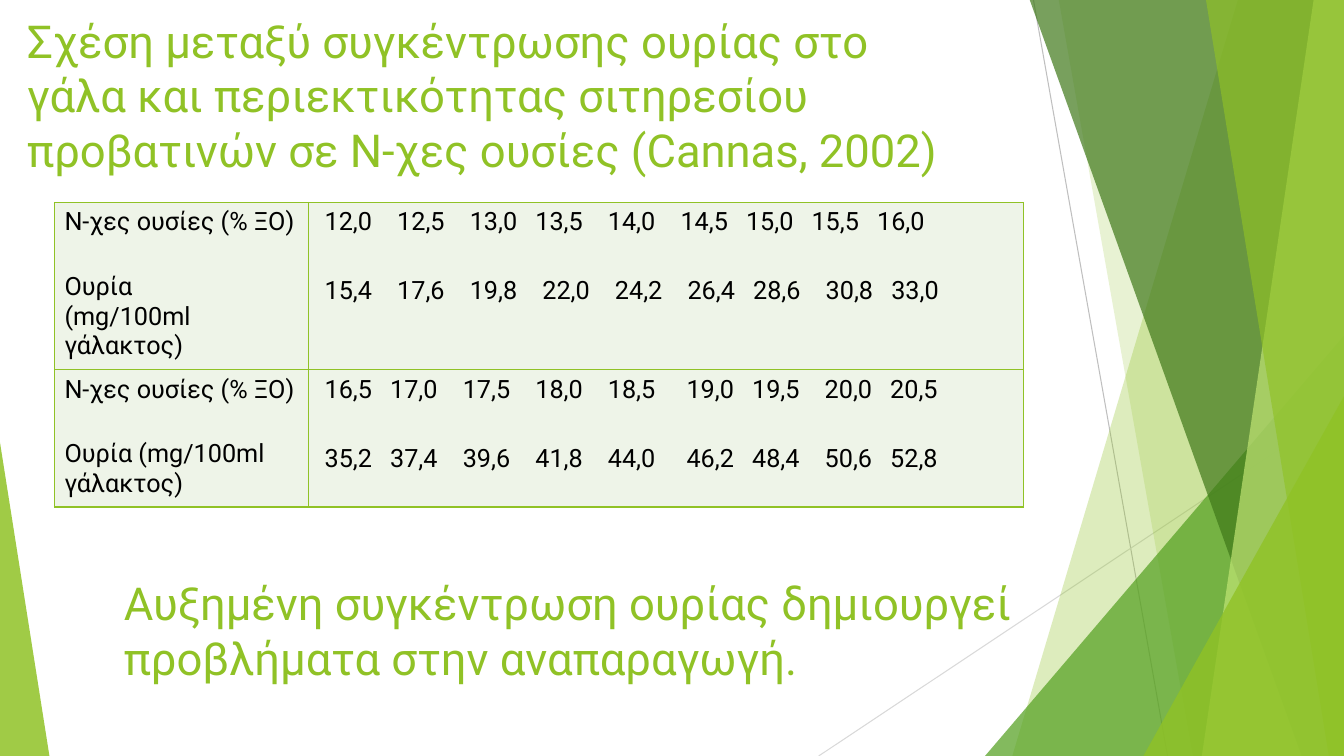
import itertools

import pptx
import pptx.dml.color
import pptx.enum.shapes
import pptx.enum.text
import pptx.oxml
import pptx.oxml.ns
import pptx.util
from pptx.util import Inches

GREEN = "90C226"
FONT = "Roboto"
NARROW, MEDIUM, WIDE = 0.65, 0.72, 0.78  # steps between values, inches

# Facets of the theme: corner points, colour, opacity in percent
FACETS_BELOW = [
    ([(12.28, -0.01), (13.33, -0.01), (13.33, 7.5), (10.04, 7.5)], GREEN, 30),
    ([(10.5, -0.01), (13.33, -0.01), (13.33, 7.5), (11.83, 7.5)], GREEN, 20),
]
FACETS_ABOVE = [
    ([(10.21, -0.01), (13.33, -0.01), (13.33, 7.5), (12.91, 7.5)], "3F7819", 70),
    ([(13.03, -0.01), (13.33, -0.01), (13.33, 7.5), (11.92, 7.5)], "C0E474", 70),
    ([(11.96, -0.01), (13.33, -0.01), (13.33, 7.5), (13.18, 7.5)], GREEN, 65),
]

# Each row: urea label lines, protein values and steps, urea values and steps
PROTEIN_LABEL = "N-χες ουσίες (% ΞΟ)"
LOWER_STEPS = [NARROW, MEDIUM, MEDIUM, MEDIUM, WIDE, NARROW, MEDIUM, NARROW]
MEASUREMENTS = [
    (["Ουρία", "(mg/100ml γάλακτος)"],
     "12,0 12,5 13,0 13,5 14,0 14,5 15,0 15,5 16,0",
     [MEDIUM] * 2 + [NARROW] + [MEDIUM] * 2 + [NARROW] * 3,
     "15,4 17,6 19,8 22,0 24,2 26,4 28,6 30,8 33,0",
     [MEDIUM] * 5 + [NARROW, MEDIUM, NARROW]),
    (["Ουρία (mg/100ml γάλακτος)"],
     "16,5 17,0 17,5 18,0 18,5 19,0 19,5 20,0 20,5", LOWER_STEPS,
     "35,2 37,4 39,6 41,8 44,0 46,2 48,4 50,6 52,8", LOWER_STEPS),
]


def rgb(color):
    return pptx.dml.color.RGBColor.from_string(color)


def add_xml(parent, xml):
    parent.append(pptx.oxml.parse_xml(
        xml.replace(">", f" {pptx.oxml.ns.nsdecls('a')}>", 1)))


def write(frame, text, first=False, size=18, color="000000", before=0, steps=()):
    """Write one paragraph, with tab stops at the running sums of steps."""
    paragraph = frame.paragraphs[0] if first else frame.add_paragraph()
    paragraph.alignment = pptx.enum.text.PP_ALIGN.LEFT
    paragraph.space_before = pptx.util.Pt(before)
    if steps:
        stops = "".join(f'<a:tab pos="{Inches(stop)}" algn="l"/>'
                        for stop in itertools.accumulate(steps))
        add_xml(paragraph._p.get_or_add_pPr(), f"<a:tabLst >{stops}</a:tabLst>")
    run = paragraph.add_run()
    run.text = text
    run.font.size = pptx.util.Pt(size)
    run.font.name = FONT
    run.font.color.rgb = rgb(color)


def add_statement(box, text):
    """Fill a box with one large green sentence."""
    frame = box.text_frame
    frame.word_wrap = True
    frame.auto_size = pptx.enum.text.MSO_AUTO_SIZE.NONE
    frame.vertical_anchor = pptx.enum.text.MSO_ANCHOR.TOP
    write(frame, text, first=True, size=32.4, color=GREEN)


def paint(shape, color, opacity):
    shape.shadow.inherit = False
    shape.line.fill.background()
    shape.fill.solid()
    shape.fill.fore_color.rgb = rgb(color)
    add_xml(shape.fill._xPr.find(".//" + pptx.oxml.ns.qn("a:srgbClr")),
            f'<a:alpha val="{opacity * 1000}"></a:alpha>')


def add_ray(slide, start, end, color):
    ray = slide.shapes.add_connector(
        pptx.enum.shapes.MSO_CONNECTOR.STRAIGHT,
        *(Inches(value) for value in start + end))
    ray.line.color.rgb = rgb(color)
    ray.line.width = pptx.util.Pt(0.75)
    add_xml(ray._element.spPr, "<a:effectLst></a:effectLst>")


def add_facet(slide, points, color, opacity):
    corners = [(Inches(x), Inches(y)) for x, y in points]
    builder = slide.shapes.build_freeform(*corners[0])
    builder.add_line_segments(corners[1:], close=True)
    paint(builder.convert_to_shape(), color, opacity)


def add_triangle(slide, left, top, width, height, apex, color, opacity):
    triangle = slide.shapes.add_shape(
        pptx.enum.shapes.MSO_SHAPE.ISOSCELES_TRIANGLE,
        Inches(left), Inches(top), Inches(width), Inches(height))
    triangle.adjustments[0] = apex
    paint(triangle, color, opacity)


def add_backdrop(slide):
    add_ray(slide, (10.25, 0), (11.58, 7.5), "BFBFBF")
    add_ray(slide, (13.33, 4.03), (8.12, 7.5), "D9D9D9")
    for facet in FACETS_BELOW:
        add_facet(slide, *facet)
    add_triangle(slide, 9.77, 3.33, 3.56, 4.17, 1, "54A021", 72)
    for facet in FACETS_ABOVE:
        add_facet(slide, *facet)
    add_triangle(slide, 11.34, 3.93, 1.99, 3.57, 1, GREEN, 80)
    add_triangle(slide, 0, 4.39, 0.49, 3.11, 0, GREEN, 85)


def format_cell(cell):
    for side in "LRTB":
        add_xml(cell._tc.get_or_add_tcPr(),
                f'<a:ln{side} w="12700"><a:solidFill><a:srgbClr val="{GREEN}"/>'
                f"</a:solidFill></a:ln{side}>")
    cell.fill.solid()
    cell.fill.fore_color.rgb = rgb("EEF4E8")


def add_urea_table(slide):
    table = slide.shapes.add_table(
        2, 2, Inches(0.54), Inches(2.01), Inches(9.61), Inches(3.02)).table
    table.first_row = table.horz_banding = False
    for column, width in zip(table.columns, (2.52, 7.09)):
        column.width = Inches(width)
    for row, height in zip(table.rows, (1.66, 1.36)):
        row.height = Inches(height)

    for row, measurement in zip(table.rows, MEASUREMENTS):
        urea_label, protein, protein_steps, urea, urea_steps = measurement
        labels, values = row.cells
        format_cell(labels)
        format_cell(values)
        write(labels.text_frame, PROTEIN_LABEL, first=True)
        for index, line in enumerate(urea_label):
            write(labels.text_frame, line, before=0 if index else 25)
        values.margin_left = Inches(0.16)
        write(values.text_frame, protein.replace(" ", "\t"), first=True,
              steps=protein_steps)
        write(values.text_frame, urea.replace(" ", "\t"), before=28,
              steps=urea_steps)


def main():
    deck = pptx.Presentation()
    deck.slide_width, deck.slide_height = Inches(13.33), Inches(7.5)
    slide = deck.slides.add_slide(deck.slide_layouts[5])

    add_backdrop(slide)

    # Heading
    title = slide.shapes.title
    title.left, title.top = Inches(0.17), Inches(0.08)
    title.width, title.height = Inches(9.4), Inches(1.44)
    add_statement(title, "Σχέση μεταξύ συγκέντρωσης ουρίας στο γάλα και "
                  "περιεκτικότητας σιτηρεσίου προβατινών σε Ν-χες ουσίες "
                  "(Cannas, 2002)")

    add_urea_table(slide)

    # Conclusion
    conclusion = slide.shapes.add_textbox(
        Inches(1.13), Inches(5.66), Inches(9.4), Inches(1.44))
    add_statement(conclusion, "Αυξημένη συγκέντρωση ουρίας δημιουργεί "
                  "προβλήματα στην αναπαραγωγή.")

    deck.save("out.pptx")


if __name__ == "__main__":
    main()
